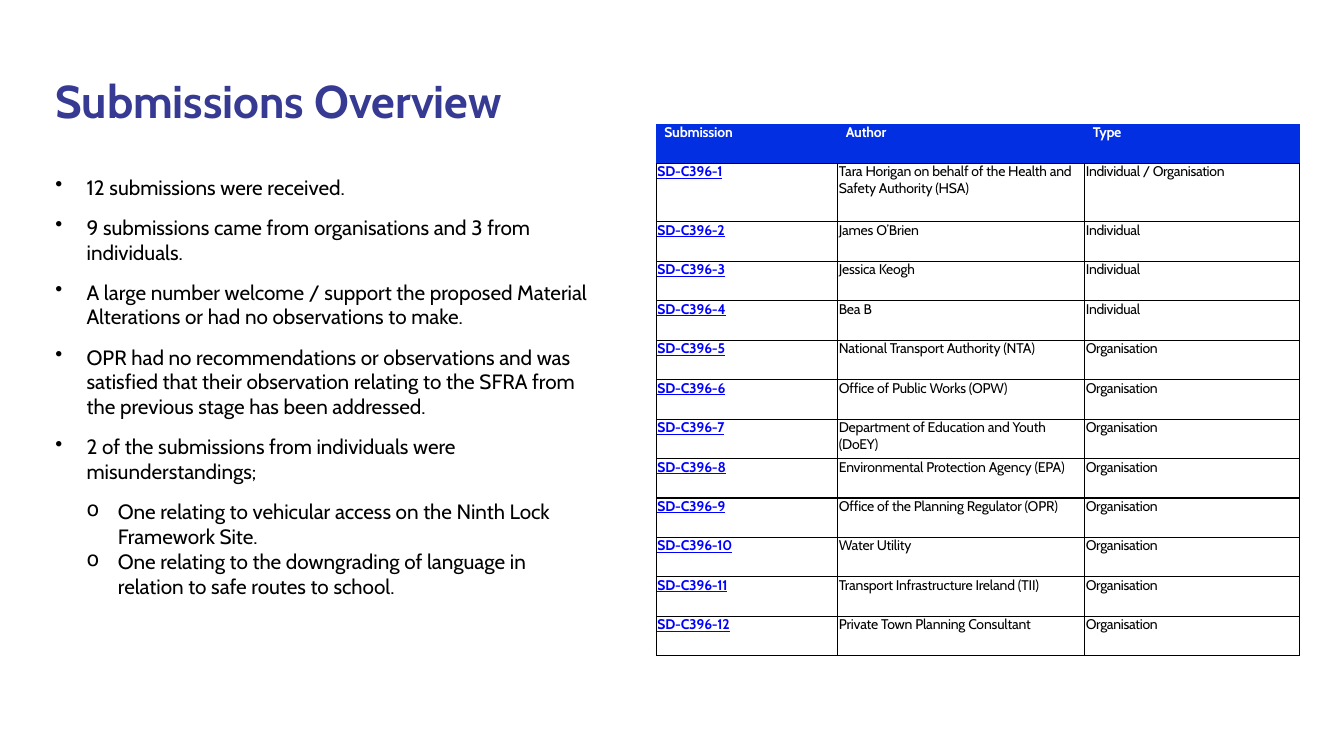
from lxml.etree import SubElement
from pptx import Presentation
from pptx.dml.color import RGBColor as Rgb
from pptx.enum.text import MSO_ANCHOR as Anchor
from pptx.oxml.ns import qn
from pptx.util import Inches, Pt

COLOURS = {"title": "363A92", "header": "032FE2", "link": "0000FF",
           "text": "000000", "paper": "FFFFFF"}
MARGINS = ("margin_left", "margin_top", "margin_right", "margin_bottom")


def write(para, text, size, colour, spacing=0, **formats):
    span = para.add_run()
    span.text = text
    font = span.font
    font.color.rgb = Rgb.from_string(COLOURS[colour])
    for name, value in {"name": "Cabin", "size": Pt(size), **formats}.items():
        setattr(font, name, value)
    if spacing:
        span._r.get_or_add_rPr().set("spc", str(round(spacing * 100)))


def add_text_frame(page, left, top, width, height, anchor):
    box = page.shapes.add_textbox(Inches(left), Inches(top), Inches(width), Inches(height))
    frame = box.text_frame
    formats = {"word_wrap": True, "vertical_anchor": anchor, **dict.fromkeys(MARGINS, 0)}
    for name, value in formats.items():
        setattr(frame, name, value)
    return frame


deck = Presentation()
deck.slide_width, deck.slide_height = Inches(13.33), Inches(7.5)
page = deck.slides.add_slide(deck.slide_layouts[6])

# Title
title = add_text_frame(page, 0.55, 0.52, 7.77, 0.94, Anchor.MIDDLE)
write(title.paragraphs[0], "Submissions Overview", 32.8, "title", bold=True)

# Bulleted findings: level and text
findings = [
    (0, "12 submissions were received."),
    (0, "9 submissions came from organisations and 3 from individuals."),
    (0, "A large number welcome / support the proposed Material Alterations "
        "or had no observations to make."),
    (0, "OPR had no recommendations or observations and was satisfied that their "
        "observation relating to the SFRA from the previous stage has been addressed."),
    (0, "2 of the submissions from individuals were misunderstandings;"),
    (1, "One relating to vehicular access on the Ninth Lock Framework Site."),
    (1, "One relating to the downgrading of language in relation to safe routes to school."),
]
body = add_text_frame(page, 0.55, 1.73, 5.33, 4.6, Anchor.TOP)
for number, (level, text) in enumerate(findings):
    para = body.add_paragraph() if number else body.paragraphs[0]
    para.level = level
    para.space_after = Pt(0 if level else 10.9)
    props = para._p.get_or_add_pPr()
    props.set("marL", str(Inches(0.31 * (level + 1))))
    props.set("indent", str(Inches(-0.31)))
    SubElement(props, qn("a:buChar"), char="•o"[level])
    write(para, text, 14.8, "text")

# Submissions table: author and type
submissions = [
    ("Tara Horigan on behalf of the Health and Safety Authority (HSA)",
     "Individual / Organisation"),
    ("James O’Brien", "Individual"),
    ("Jessica Keogh", "Individual"),
    ("Bea B", "Individual"),
    ("National Transport Authority (NTA)", "Organisation"),
    ("Office of Public Works (OPW)", "Organisation"),
    ("Department of Education and Youth (DoEY)", "Organisation"),
    ("Environmental Protection Agency (EPA)", "Organisation"),
    ("Office of the Planning Regulator (OPR)", "Organisation"),
    ("Water Utility", "Organisation"),
    ("Transport Infrastructure Ireland (TII)", "Organisation"),
    ("Private Town Planning Consultant", "Organisation"),
]
rows = [("Submission", "Author", "Type")]
rows += [(f"SD-C396-{number}", *entry) for number, entry in enumerate(submissions, 1)]
widths = (1.8, 2.45, 2.13)
height, tall_row = 5.28, 0.58
plain_row = (height - tall_row) / (len(rows) - 1)

table = page.shapes.add_table(len(rows), len(widths), Inches(6.51), Inches(1.23),
                              Inches(sum(widths)), Inches(height)).table
table.first_row = table.horz_banding = False
for column, width in zip(table.columns, widths):
    column.width = Inches(width)

for row_number, values in enumerate(rows):
    is_header = row_number == 0
    table.rows[row_number].height = Inches(tall_row if row_number == 1 else plain_row)
    for column_number, text in enumerate(values):
        cell = table.cell(row_number, column_number)
        for margin in MARGINS:
            setattr(cell, margin, 0)

        # Black borders, only below in the header
        props = cell._tc.get_or_add_tcPr()
        for side in ("lnL", "lnR", "lnT", "lnB"):
            line = SubElement(props, qn(f"a:{side}"), w=str(Pt(1)))
            if is_header and side != "lnB":
                SubElement(line, qn("a:noFill"))
            else:
                fill = SubElement(line, qn("a:solidFill"))
                SubElement(fill, qn("a:srgbClr"), val=COLOURS["text"])
        if is_header:
            cell.fill.solid()
            cell.fill.fore_color.rgb = Rgb.from_string(COLOURS["header"])
        else:
            cell.fill.background()

        # Cell text
        para = cell.text_frame.paragraphs[0]
        para._p.get_or_add_pPr().set("marL", str(Inches(0.08 if is_header else 0.01)))
        is_link = column_number == 0 and not is_header
        colour = "paper" if is_header else "link" if is_link else "text"
        write(para, text, 10, colour, -0.2 if column_number == 2 else -0.1,
              bold=is_header or is_link, underline=is_link)

deck.save("out.pptx")
